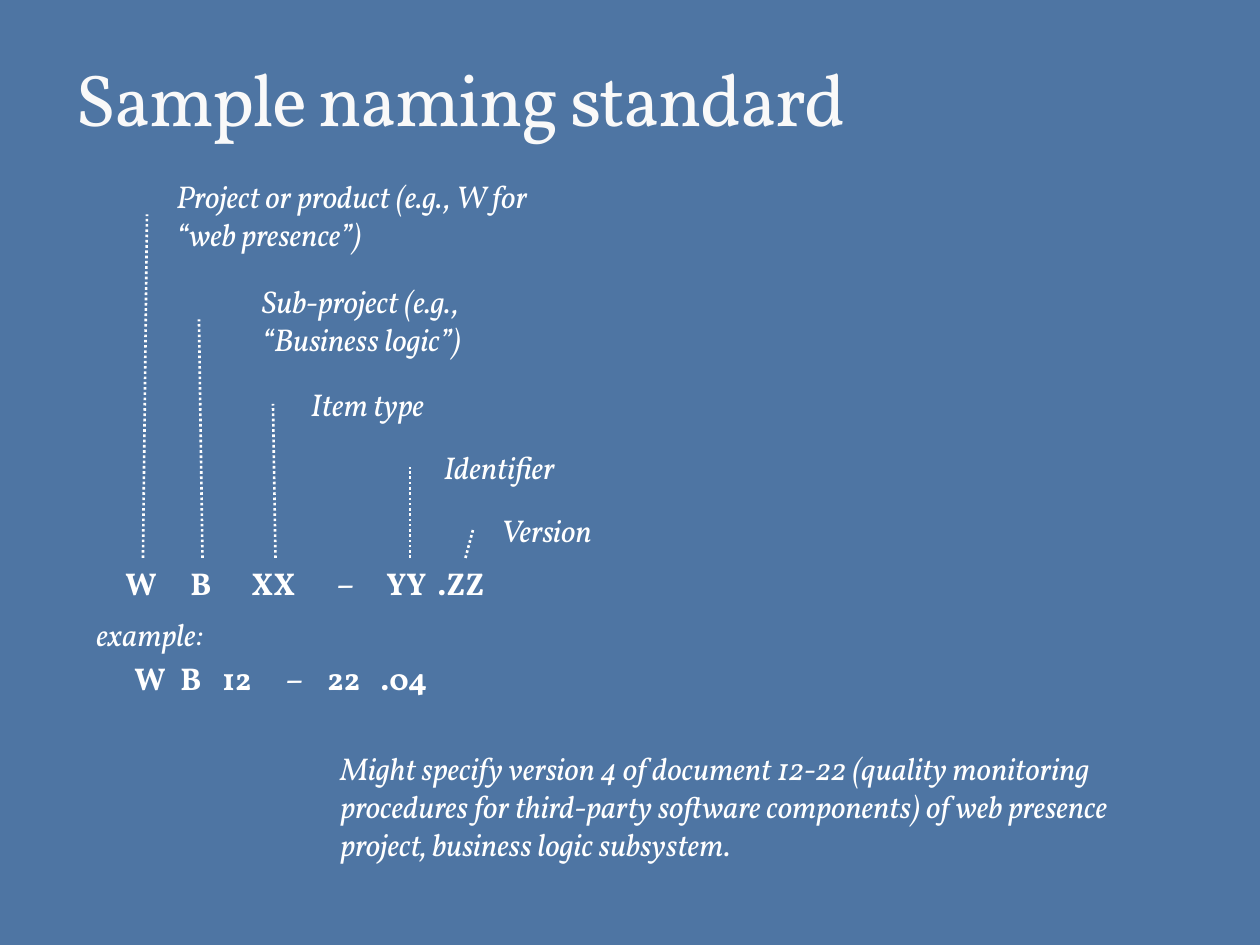
from dataclasses import dataclass

from lxml.etree import SubElement
from pptx import Presentation
from pptx.dml.color import RGBColor as RGB
from pptx.enum.dml import MSO_LINE
from pptx.enum.shapes import MSO_CONNECTOR
from pptx.enum.text import MSO_ANCHOR, MSO_AUTO_SIZE, PP_ALIGN
from pptx.oxml.ns import qn
from pptx.util import Pt


@dataclass(frozen=True)
class Theme:
    font: str = "Vollkorn"
    back: RGB = RGB(0x4E, 0x75, 0xA3)
    title: RGB = RGB(0xF9, 0xF9, 0xF9)
    text: RGB = RGB(0xFF, 0xFF, 0xFF)
    title_size: int = 42
    text_size: int = 18
    line_width: float = 1.5


THEME = Theme()
PX = 914400 // 126
ROW_H = 50
PATTERN_Y, EXAMPLE_Y = 558, 653

TITLE = ("Sample naming standard", 63, 38, 1134, 110)
PATTERN = [("W", 113, 60), ("B", 178, 49), ("XX", 239, 73),
           ("–", 324, 48), ("YY", 374, 72), (".ZZ", 425, 81)]
EXAMPLE = [("W", 122, 60), ("B", 168, 49), ("12", 210, 71),
           ("–", 273, 48), ("22", 315, 71), (".04", 368, 82)]
LABELS = [
    ("W", "Project or product (e.g., W for “web presence”)", 147, 170, 410, 89),
    ("B", "Sub-project (e.g., “Business logic”)", 199, 275, 325, 89),
    ("XX", "Item type", 273, 379, 189, ROW_H),
    ("YY", "Identifier", 410, 442, 179, ROW_H),
    (".ZZ", "Version", 473, 505, 147, ROW_H),
]
CAPTION = ("example:", 84, 609, 174, ROW_H)
MEANING = ("Might specify version 4 of document 12-22 (quality monitoring "
           "procedures for third-party software components) of web presence "
           "project, business logic subsystem.", 325, 703, 798, 166)


def px(*values):
    return [v * PX for v in values]


def style(p, size, color, bold=False, italic=False):
    f = p.font
    f.name, f.size, f.bold, f.italic = THEME.font, Pt(size), bold, italic
    f.color.rgb = color


def add_text(s, text, x, y, w, h, wrap=True, centred=False, **look):
    sp = s.shapes.add_textbox(*px(x, y, w, h))
    tf = sp.text_frame
    tf.text = text
    tf.word_wrap = wrap
    tf.auto_size = MSO_AUTO_SIZE.SHAPE_TO_FIT_TEXT
    tf.vertical_anchor = MSO_ANCHOR.BOTTOM
    if centred:
        sp._element.txBody.find(qn("a:bodyPr")).set("anchorCtr", "1")
    style(tf.paragraphs[0], THEME.text_size, THEME.text, **look)
    return sp


def add_row(s, tokens, y):
    return {text: add_text(s, text, x, y, w, ROW_H, wrap=False, bold=True)
            for text, x, w in tokens}


def add_leader(s, token, label):
    line = s.shapes.add_connector(MSO_CONNECTOR.STRAIGHT, 0, 0, 0, 0)
    line.begin_connect(token, 0)
    line.end_connect(label, 1)
    line.line.color.rgb = THEME.text
    line.line.width = Pt(THEME.line_width)
    line.line.dash_style = MSO_LINE.ROUND_DOT
    SubElement(line._element.spPr, qn("a:effectLst"))


def add_title(s, text, *box):
    sp = s.shapes.title
    sp.left, sp.top, sp.width, sp.height = px(*box)
    tf = sp.text_frame
    tf.text = text
    tf.auto_size = MSO_AUTO_SIZE.NONE
    tf.vertical_anchor = MSO_ANCHOR.BOTTOM
    p = tf.paragraphs[0]
    p.alignment = PP_ALIGN.LEFT
    style(p, THEME.title_size, THEME.title)
    p.runs[0]._r.get_or_add_rPr().set("spc", "-100")


def main():
    prs = Presentation()
    prs.slide_width, prs.slide_height = px(1260, 945)
    s = prs.slides.add_slide(prs.slide_layouts[5])
    s.background.fill.solid()
    s.background.fill.fore_color.rgb = THEME.back

    add_title(s, *TITLE)
    tokens = add_row(s, PATTERN, PATTERN_Y)
    for key, text, *box in LABELS:
        label = add_text(s, text, *box, centred=True, italic=True)
        add_leader(s, tokens[key], label)
    add_row(s, EXAMPLE, EXAMPLE_Y)
    add_text(s, *MEANING, centred=True, italic=True)
    add_text(s, *CAPTION, italic=True)
    prs.save("out.pptx")


if __name__ == "__main__":
    main()
